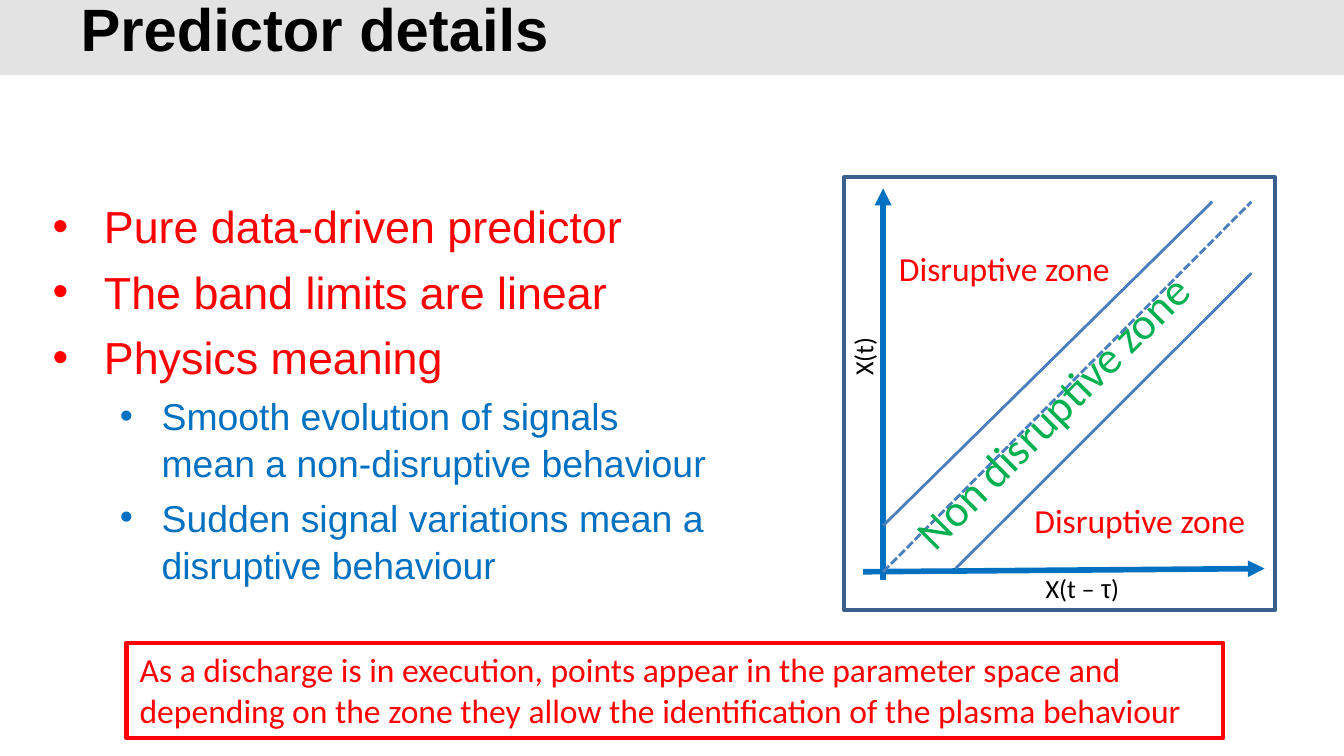
from lxml import etree
from pptx import Presentation
from pptx import util as u
from pptx.dml.color import RGBColor
from pptx.enum import dml, shapes, text
from pptx.oxml.ns import qn

RED, BLUE, GREEN, BLACK = "FF0000", "0070C0", "00B050", "000000"
BAND_BLUE, FRAME_BLUE, GREY = "4B7EBC", "3A5F8C", "E3E3E3"

BULLETS = [
    ("Pure data-driven predictor", 0),
    ("The band limits are linear", 0),
    ("Physics meaning", 0),
    ("Smooth evolution of signals mean a non-disruptive behaviour", 1),
    ("Sudden signal variations mean a disruptive behaviour", 1),
]
# size, colour, left margin and hanging indent in cm
LEVELS = [(24, RED, 0.97, 0.97), (20, BLUE, 2.06, 0.79)]


def color(value):
    return RGBColor.from_string(value)


def place(shape, left, top, width, height):
    shape.left, shape.top = u.Cm(left), u.Cm(top)
    shape.width, shape.height = u.Cm(width), u.Cm(height)


def add_text(paragraph, content, size=18, fill=BLACK, font="Calibri", bold=False):
    run = paragraph.add_run()
    run.text = content
    run.font.size = u.Pt(size)
    run.font.name = font
    run.font.bold = bold
    run.font.color.rgb = color(fill)


def add_label(slide, position, content, rotation=0, **text_format):
    box = slide.shapes.add_textbox(*map(u.Cm, position))
    box.rotation = rotation
    box.text_frame.word_wrap = False
    paragraph = box.text_frame.paragraphs[0]
    add_text(paragraph, content, **text_format)
    return paragraph


def add_rectangle(slide, position, fill=None, line=None, width=0):
    shape = slide.shapes.add_shape(shapes.MSO_SHAPE.RECTANGLE, *map(u.Cm, position))
    shape.shadow.inherit = False
    if fill:
        shape.fill.solid()
        shape.fill.fore_color.rgb = color(fill)
    else:
        shape.fill.background()
    if line:
        shape.line.color.rgb = color(line)
        shape.line.width = u.Pt(width)
    else:
        shape.line.fill.background()
    return shape


def add_line(slide, ends, stroke=BAND_BLUE, width=1.5, dashed=False, arrow=False):
    line = slide.shapes.add_connector(shapes.MSO_CONNECTOR.STRAIGHT, *map(u.Cm, ends))
    line.line.color.rgb = color(stroke)
    line.line.width = u.Pt(width)
    if dashed:
        line.line.dash_style = dml.MSO_LINE.SQUARE_DOT
    if arrow:
        etree.SubElement(line.line._get_or_add_ln(), qn("a:tailEnd"), type="triangle")
    etree.SubElement(line._element.spPr, qn("a:effectLst"))


def add_title(slide):
    band = add_rectangle(slide, (0, 0, 25.4, 1.42), fill=GREY)
    slide.shapes._spTree.insert(2, band._element)  # behind the title
    title = slide.shapes.title
    place(title, 1.27, 0.15, 20.96, 0.97)
    title.text_frame.auto_size = text.MSO_AUTO_SIZE.NONE
    title.text_frame.vertical_anchor = text.MSO_ANCHOR.MIDDLE
    paragraph = title.text_frame.paragraphs[0]
    paragraph.alignment = text.PP_ALIGN.LEFT
    paragraph.line_spacing = u.Pt(32)
    add_text(paragraph, "Predictor details", size=32, font="Arial", bold=True)


def add_bullets(slide):
    body = slide.placeholders[1]
    place(body, 0.74, 3.58, 12.95, 8.36)
    frame = body.text_frame
    frame.auto_size = text.MSO_AUTO_SIZE.NONE
    for index, (content, level) in enumerate(BULLETS):
        size, fill, margin, hanging = LEVELS[level]
        paragraph = frame.add_paragraph() if index else frame.paragraphs[0]
        paragraph.level = level
        properties = paragraph._p.get_or_add_pPr()
        properties.set("marL", str(u.Cm(margin)))
        properties.set("indent", str(-u.Cm(hanging)))
        etree.SubElement(properties, qn("a:buFont"), typeface="Arial")
        etree.SubElement(properties, qn("a:buChar"), char="•")
        paragraph.line_spacing = 1.05
        paragraph.space_before = u.Pt(0.2 * size if index else 0)
        add_text(paragraph, content, size=size, fill=fill, font="Arial")


def add_diagram(slide):
    add_line(slide, (16.69, 10.95, 16.69, 3.56), BLUE, 3, arrow=True)
    add_line(slide, (16.31, 10.8, 23.9, 10.74), BLUE, 3, arrow=True)
    add_rectangle(slide, (15.95, 3.35, 8.15, 8.18), line=FRAME_BLUE, width=2)

    axis_label = add_label(slide, (19.51, 10.69, 1.93, 0.86), "X(t – ", size=14)
    add_text(axis_label, "τ", size=14, font="Arial")
    add_text(axis_label, ")", size=14)
    add_label(slide, (15.7, 6.3, 1.24, 0.86), "X(t)", rotation=270, size=14)

    add_line(slide, (16.69, 10.8, 23.65, 3.81), dashed=True)
    add_line(slide, (18.06, 10.74, 23.65, 5.16))
    add_line(slide, (16.69, 9.93, 22.91, 3.81))

    for left, top in ((16.74, 4.55), (19.3, 9.32)):
        add_label(slide, (left, top, 4.55, 1.02), "Disruptive zone", fill=RED)
    add_label(slide, (16.18, 7.09, 7.47, 1.27), "Non disruptive zone",
              rotation=315, size=24, fill=GREEN)


def add_conclusion(slide):
    box = add_rectangle(slide, (2.39, 12.14, 20.73, 1.8), line=RED, width=2.25)
    frame = box.text_frame
    frame.word_wrap = True
    frame.vertical_anchor = text.MSO_ANCHOR.TOP
    paragraph = frame.paragraphs[0]
    paragraph.alignment = text.PP_ALIGN.LEFT
    add_text(paragraph, "As a discharge is in execution, points appear in the parameter "
             "space and depending on the zone they allow the identification of the "
             "plasma behaviour", fill=RED)


def main():
    presentation = Presentation()
    presentation.slide_width = u.Cm(25.4)
    presentation.slide_height = u.Cm(14.28)
    slide = presentation.slides.add_slide(presentation.slide_layouts[1])
    add_title(slide)
    add_bullets(slide)
    add_diagram(slide)
    add_conclusion(slide)
    presentation.save("out.pptx")


if __name__ == "__main__":
    main()
